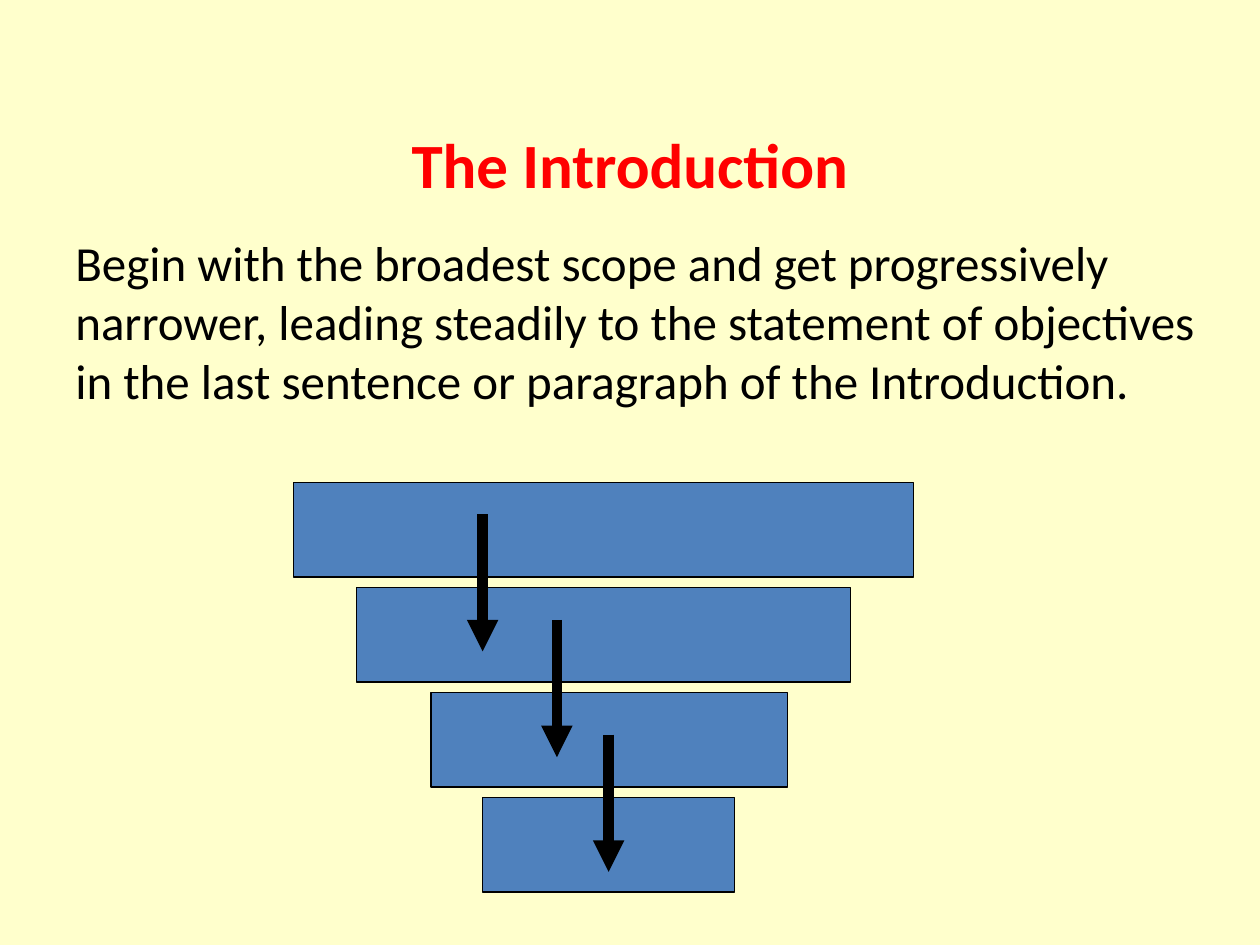
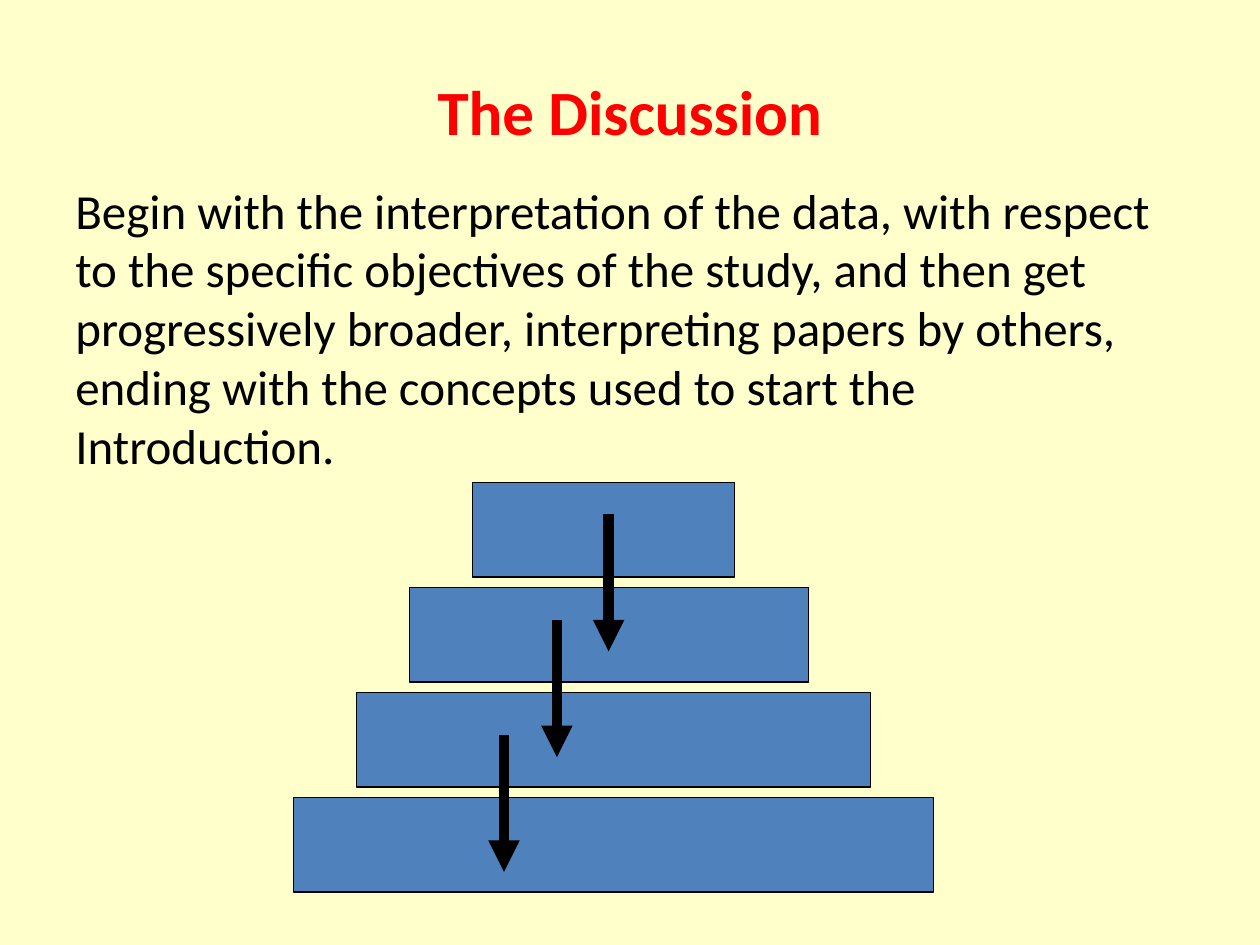
from dataclasses import dataclass

from lxml import etree
from pptx import Presentation
from pptx.dml.color import RGBColor
from pptx.enum.shapes import MSO_CONNECTOR, MSO_SHAPE
from pptx.enum.text import MSO_ANCHOR, PP_ALIGN
from pptx.oxml.ns import qn
from pptx.util import Inches, Pt

RECTANGLE = MSO_SHAPE.RECTANGLE
STRAIGHT = MSO_CONNECTOR.STRAIGHT
TOP, MIDDLE = MSO_ANCHOR.TOP, MSO_ANCHOR.MIDDLE
LEFT, CENTER = PP_ALIGN.LEFT, PP_ALIGN.CENTER

COLORS = {
    "background": "FFFFCC",
    "title": "FF0000",
    "body": "000000",
    "bar": "4F81BD",
    "line": "000000",
}
TITLE_FORMAT = {"name": "Calibri", "size": Pt(36), "bold": True}
BODY_FORMAT = {"name": "Calibri", "size": Pt(28), "bold": False}

MARGIN = 0.5
TITLE_WIDTH, TITLE_HEIGHT = 9, 1.25
BODY_BOTTOM = 6.3
FIRST_BAR_TOP = 3.83
BAR_STEP = 2.5 / 3
BAR_HEIGHT = 0.75
ARROW_TOPS = (4.08, 4.92, 5.83)
ARROW_LENGTH = 1.09


@dataclass(frozen=True)
class Bar:
    left: float
    width: float


@dataclass(frozen=True)
class Section:
    title: str
    title_top: float
    body: str
    body_top: float
    body_width: float
    bars: tuple[Bar, ...]
    arrow_lefts: tuple[float, ...]


SECTIONS = (
    Section(
        title="The Introduction",
        title_top=0.67,
        body="Begin with the broadest scope and get progressively narrower, "
        "leading steadily to the statement of objectives in the last sentence "
        "or paragraph of the Introduction.",
        body_top=1.8,
        body_width=9.17,
        bars=(Bar(2.33, 4.92), Bar(2.83, 3.92), Bar(3.42, 2.83), Bar(3.83, 2)),
        arrow_lefts=(3.83, 4.42, 4.83),
    ),
    Section(
        title="The Discussion",
        title_top=0.25,
        body="Begin with the interpretation of the data, with respect to the "
        "specific objectives of the study, and then get progressively broader, "
        "interpreting papers by others, ending with the concepts used to start "
        "the Introduction.",
        body_top=1.38,
        body_width=9,
        bars=(Bar(3.75, 2.08), Bar(3.25, 3.17), Bar(2.83, 4.08), Bar(2.33, 5.08)),
        arrow_lefts=(4.83, 4.42, 4),
    ),
)


def color(name: str) -> RGBColor:
    return RGBColor.from_string(COLORS[name])


def add_text(page, text: str, top: float, width: float, height: float,
             text_format: dict, color_name: str, alignment, anchor) -> None:
    box = page.shapes.add_textbox(
        Inches(MARGIN), Inches(top), Inches(width), Inches(height))
    frame = box.text_frame
    frame.word_wrap = True
    frame.vertical_anchor = anchor
    para = frame.paragraphs[0]
    para.alignment = alignment
    span = para.add_run()
    span.text = text
    for attribute, value in text_format.items():
        setattr(span.font, attribute, value)
    span.font.color.rgb = color(color_name)


def add_bar(page, bar: Bar, top: float) -> None:
    shape = page.shapes.add_shape(
        RECTANGLE, Inches(bar.left), Inches(top),
        Inches(bar.width), Inches(BAR_HEIGHT))
    shape.shadow.inherit = False
    shape.fill.solid()
    shape.fill.fore_color.rgb = color("bar")
    shape.line.color.rgb = color("line")
    shape.line.width = Pt(0.75)


def add_arrow(page, left: float, top: float) -> None:
    arrow = page.shapes.add_connector(
        STRAIGHT, Inches(left), Inches(top),
        Inches(left), Inches(top + ARROW_LENGTH))
    arrow.line.color.rgb = color("line")
    arrow.line.width = Pt(6)
    properties = arrow.element.spPr
    outline = properties.find(qn("a:ln"))
    etree.SubElement(outline, qn("a:tailEnd"), type="triangle")
    etree.SubElement(properties, qn("a:effectLst"))


def add_section(deck, section: Section) -> None:
    page = deck.slides.add_slide(deck.slide_layouts[6])
    page.background.fill.solid()
    page.background.fill.fore_color.rgb = color("background")
    add_text(page, section.title, section.title_top, TITLE_WIDTH, TITLE_HEIGHT,
             TITLE_FORMAT, "title", CENTER, MIDDLE)
    add_text(page, section.body, section.body_top, section.body_width,
             BODY_BOTTOM - section.body_top, BODY_FORMAT, "body", LEFT, TOP)
    for index, bar in enumerate(section.bars):
        add_bar(page, bar, FIRST_BAR_TOP + index * BAR_STEP)
    for left, top in zip(section.arrow_lefts, ARROW_TOPS):
        add_arrow(page, left, top)


def main() -> None:
    deck = Presentation()
    deck.slide_width = Inches(10)
    deck.slide_height = Inches(7.5)
    for section in SECTIONS:
        add_section(deck, section)
    deck.save("out.pptx")


if __name__ == "__main__":
    main()
